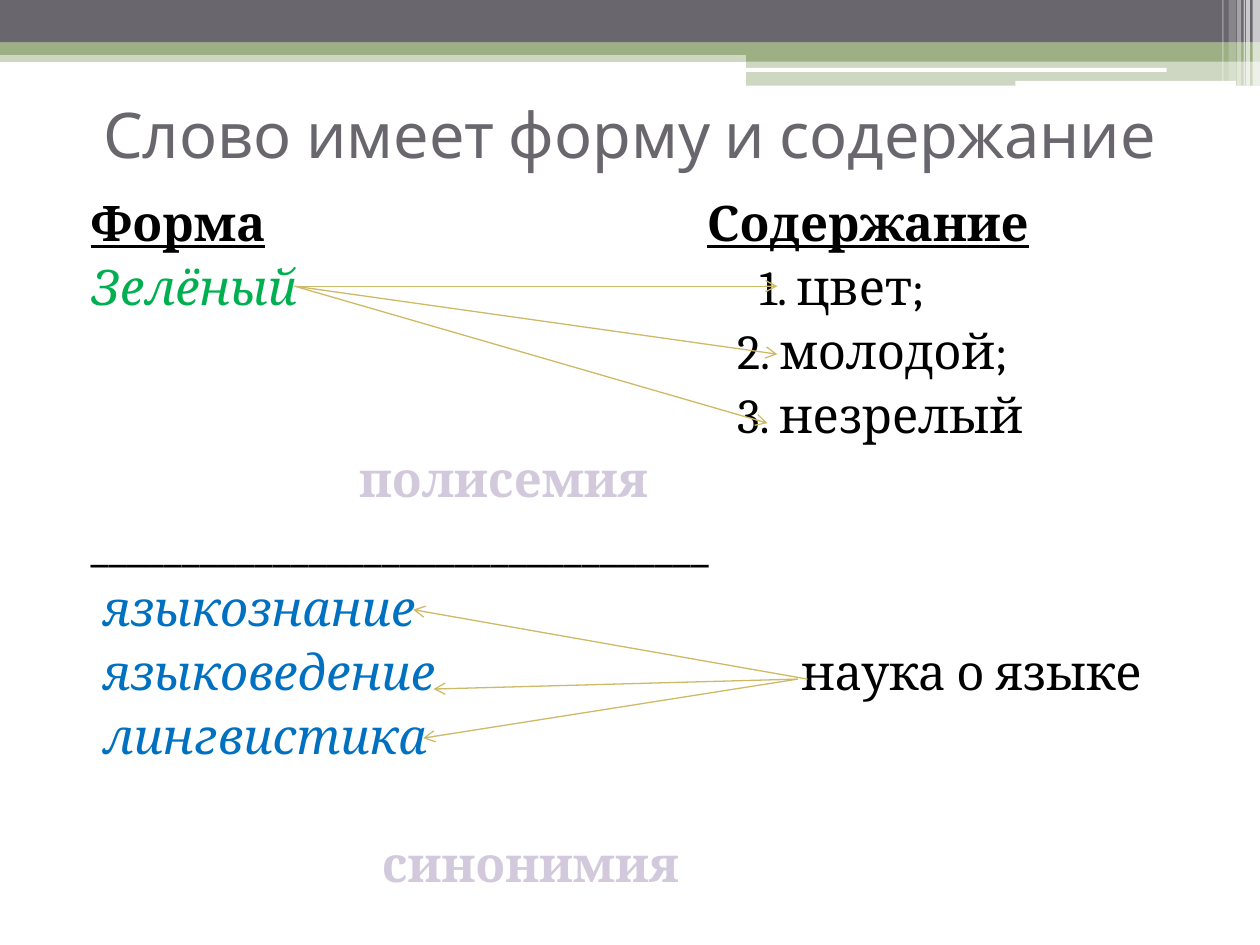
import pptx
import pptx.util
import pptx.dml.color
import pptx.enum.shapes
import pptx.enum.text
import pptx.oxml
import pptx.oxml.ns
import lxml.etree

Cm = pptx.util.Cm
Pt = pptx.util.Pt
Preset = pptx.enum.shapes.MSO_SHAPE
Anchor = pptx.enum.text.MSO_ANCHOR
Align = pptx.enum.text.PP_ALIGN

COLORS = {
    "gray": "69676D",
    "sage": "9CB084",
    "white": "FFFFFF",
    "black": "000000",
    "green": "00B050",
    "blue": "0070C0",
    "lilac": "D2C9DC",
    "outline": "68656F",
    "gold": "CEB966",
}


def color(name):
    return pptx.dml.color.RGBColor.from_string(COLORS[name])


def add_child(parent, tag, **attributes):
    return lxml.etree.SubElement(parent, pptx.oxml.ns.qn(tag), attributes)


class SlideBuilder:
    title_font = "Cabin"
    body_font = "Cambria"
    body_size = 28

    def __init__(self, slide):
        self.slide = slide

    def bar(self, left, top, width, height, fill, opacity=100, preset=Preset.RECTANGLE):
        shape = self.slide.shapes.add_shape(preset, Cm(left), Cm(top), Cm(width), Cm(height))
        shape.shadow.inherit = False
        shape.fill.solid()
        shape.fill.fore_color.rgb = color(fill)
        shape.line.fill.background()
        if opacity < 100:
            fill_color = shape.fill._xPr.find(".//" + pptx.oxml.ns.qn("a:srgbClr"))
            add_child(fill_color, "a:alpha", val=str(opacity * 1000))

    def text_box(self, left, top, width, height, anchor=Anchor.TOP, inset=0.25):
        shape = self.slide.shapes.add_textbox(Cm(left), Cm(top), Cm(width), Cm(height))
        frame = shape.text_frame
        frame.word_wrap = True
        frame.vertical_anchor = anchor
        frame.margin_left = Cm(inset)
        return frame

    def run(self, paragraph, text, fill="black", font=None, size=None,
            bold=False, italic=False, underline=False, outline=None):
        run = paragraph.add_run()
        run.text = text
        run.font.name = font or self.body_font
        run.font.size = Pt(size or self.body_size)
        run.font.bold = bold
        run.font.italic = italic
        run.font.underline = underline
        run.font.color.rgb = color(fill)
        if outline:
            properties = run._r.get_or_add_rPr()
            line = add_child(properties, "a:ln", w=str(Pt(1)))
            add_child(add_child(line, "a:solidFill"), "a:srgbClr", val=COLORS[outline])
            properties.insert(0, line)

    def title(self, text):
        frame = self.text_box(1.27, 1.4, 22.86, 2.59, Anchor.MIDDLE)
        paragraph = frame.paragraphs[0]
        paragraph.alignment = Align.CENTER
        self.run(paragraph, text, "gray", self.title_font, 36)

    def column(self, left, top, width, height, lines):
        frame = self.text_box(left, top, width, height, inset=0.56)
        for number, (margin, skipped_lines, text, style) in enumerate(lines):
            paragraph = frame.add_paragraph() if number else frame.paragraphs[0]
            paragraph.space_before = Pt(3 + skipped_lines * LINE_PITCH)
            properties = paragraph._p.get_or_add_pPr()
            properties.set("marL", str(Cm(margin)))
            properties.set("indent", "0")
            self.run(paragraph, text, **style)

    def arrow(self, start, end):
        connector = self.slide.shapes.add_connector(
            pptx.enum.shapes.MSO_CONNECTOR.STRAIGHT, *(Cm(value) for value in start + end))
        connector.line.color.rgb = color("gold")
        connector.line.width = Pt(0.75)
        add_child(connector.line._get_or_add_ln(), "a:tailEnd", type="arrow")
        add_child(connector._element.spPr, "a:effectLst")


BANDS = [
    (0, 1.02, 25.4, 0.23, "sage", 50),
    (0, 0, 25.4, 0.86, "gray"),
    (0, 0.86, 25.4, 0.25, "sage"),
    (15.04, 0.99, 10.36, 0.25, "sage"),
    (15.04, 1.22, 10.36, 0.51, "sage", 50),
    (15.01, 1.37, 8.51, 0.08, "white", 100, Preset.ROUNDED_RECTANGLE),
    (20.47, 1.63, 4.45, 0.1, "white", 100, Preset.ROUNDED_RECTANGLE),
]
STRIPES = [
    (25.25, 0.15, 1.73, 65),
    (25.12, 0.08, 1.73, 65),
    (25.07, 0.03, 1.73, 60),
    (24.94, 0.08, 1.73, 40),
    (24.77, 0.15, 1.63, 20),
    (24.64, 0.03, 1.63, 30),
]

LINE_PITCH = 36.6
BODY_TOP = 3.76
DEFINITION_TOP = BODY_TOP + 7 * Pt(LINE_PITCH).cm

PLAIN = {}
HEADING = {"bold": True, "underline": True}
EXAMPLE = {"fill": "green", "italic": True}
SYNONYM = {"fill": "blue", "italic": True}
TERM = {"fill": "lilac", "bold": True, "outline": "outline"}

FORM_LINES = [
    (0, 0, "Форма", HEADING),
    (0, 0, "Зелёный", EXAMPLE),
    (5.41, 2, "полисемия", TERM),
    (0, 0, "_" * 34, PLAIN),
    (0.23, 0, "языкознание", SYNONYM),
    (0.23, 0, "языковедение", SYNONYM),
    (0.23, 0, "лингвистика", SYNONYM),
    (5.87, 1, "синонимия", TERM),
]
CONTENT_LINES = [
    (0, 0, "Содержание", HEADING),
    (1.06, 0, "1. цвет;", PLAIN),
    (0.61, 0, "2. молодой;", PLAIN),
    (0.61, 0, "3. незрелый", PLAIN),
]
DEFINITION_LINES = [(0, 0, "наука о языке", PLAIN)]

WORD = (5.94, 5.77)
MEANINGS = [(15.67, 5.77), (15.67, 7.14), (15.47, 8.53)]
SYNONYM_ARROWS = [
    ((16.28, 13.69), (8.33, 12.29)),
    ((16.08, 13.69), (8.74, 13.89)),
    ((16.08, 13.69), (8.53, 14.88)),
]


def main():
    presentation = pptx.Presentation()
    presentation.slide_width = Cm(25.4)
    presentation.slide_height = Cm(19.05)
    builder = SlideBuilder(presentation.slides.add_slide(presentation.slide_layouts[6]))
    for band in BANDS:
        builder.bar(*band)
    for left, width, height, opacity in STRIPES:
        builder.bar(left, 0, width, height, "white", opacity)
    builder.title("Слово имеет форму и содержание")
    builder.column(1.27, BODY_TOP, 22.86, 14.5, FORM_LINES)
    builder.column(13.69, BODY_TOP, 10.44, 5.5, CONTENT_LINES)
    builder.column(15.59, DEFINITION_TOP, 8.54, 1.6, DEFINITION_LINES)
    for meaning in MEANINGS:
        builder.arrow(WORD, meaning)
    for start, end in SYNONYM_ARROWS:
        builder.arrow(start, end)
    presentation.save("out.pptx")


if __name__ == "__main__":
    main()
